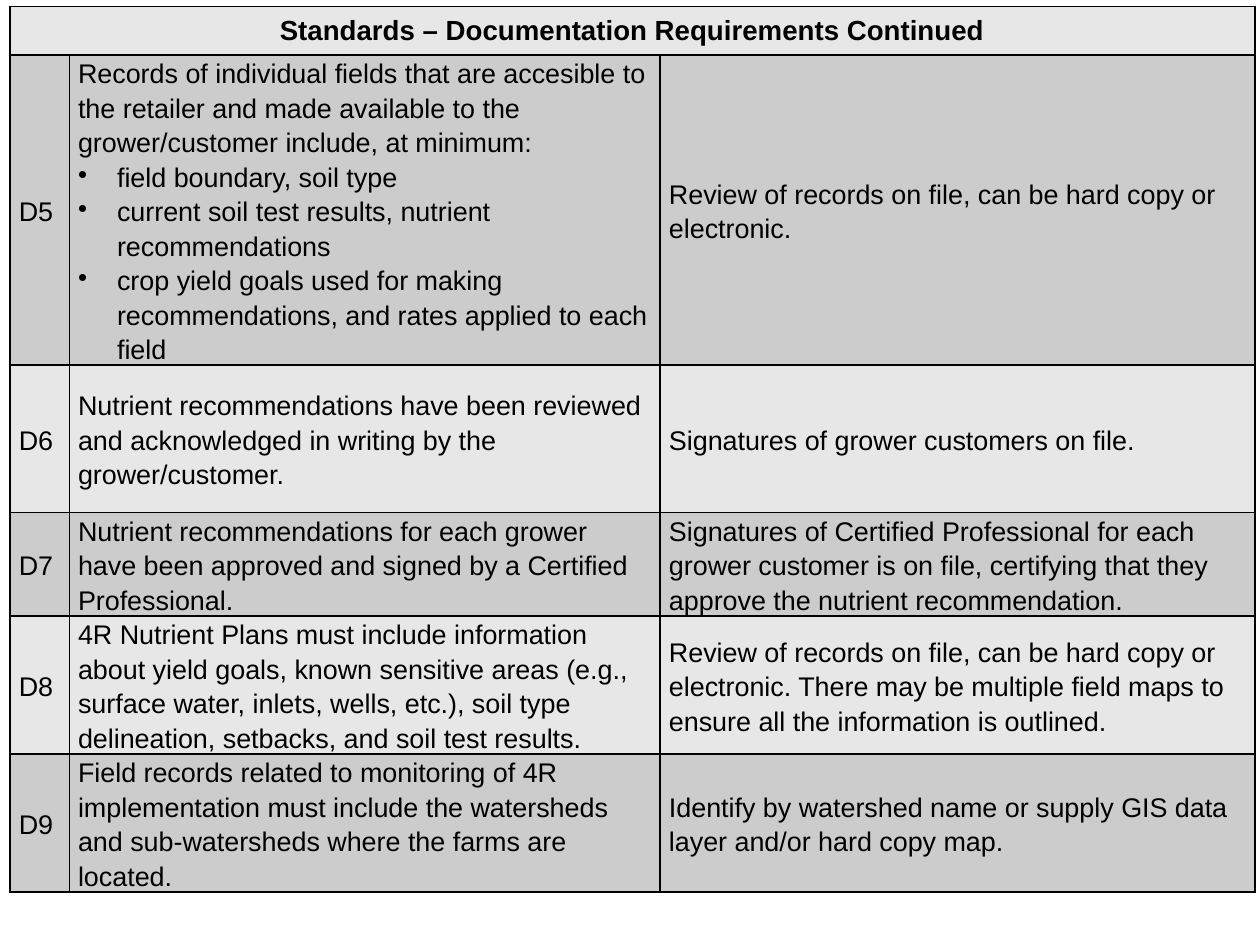
"""Build the slide of documentation standards D5 to D9."""
from pptx import Presentation
from pptx.dml.color import RGBColor
from pptx.enum.text import MSO_ANCHOR, PP_ALIGN
from pptx.oxml.ns import qn
from pptx.util import Inches, Pt
from lxml import etree

MIDDLE = MSO_ANCHOR.MIDDLE
CENTER = PP_ALIGN.CENTER
COLORS = {"text": "000000", "line": "000000", "light": "E7E7E7", "dark": "CCCCCC"}
WIDTHS = [0.47, 4.69, 4.72]
HEIGHTS = [0.31, 1.45, 1.17, 0.31, 0.91, 0.91]
TITLE = "Standards – Documentation Requirements Continued"
ROWS = [
    ("D5",
     "Records of individual fields that are accesible to the retailer and made "
     "available to the grower/customer include, at minimum:\n"
     "field boundary, soil type\n"
     "current soil test results, nutrient recommendations\n"
     "crop yield goals used for making recommendations, and rates applied to each field",
     "Review of records on file, can be hard copy or electronic."),
    ("D6",
     "Nutrient recommendations have been reviewed and acknowledged in writing by "
     "the grower/customer.",
     "Signatures of grower customers on file."),
    ("D7",
     "Nutrient recommendations for each grower have been approved and signed by a "
     "Certified Professional.",
     "Signatures of Certified Professional for each grower customer is on file, "
     "certifying that they approve the nutrient recommendation."),
    ("D8",
     "4R Nutrient Plans must include information about yield goals, known sensitive "
     "areas (e.g., surface water, inlets, wells, etc.), soil type delineation, "
     "setbacks, and soil test results.",
     "Review of records on file, can be hard copy or electronic. There may be "
     "multiple field maps to ensure all the information is outlined."),
    ("D9",
     "Field records related to monitoring of 4R implementation must include the "
     "watersheds and sub-watersheds where the farms are located.",
     "Identify by watershed name or supply GIS data layer and/or hard copy map."),
]


def style_cell(cell, fill, size, bold, pad_x, pad_y):
    cell.margin_left = cell.margin_right = Inches(pad_x)
    cell.margin_top = cell.margin_bottom = Inches(pad_y)
    for para in cell.text_frame.paragraphs:
        font = para.font
        font.name, font.size, font.bold = "Arial", Pt(size), bold
        font.color.rgb = RGBColor.from_string(COLORS["text"])
    props = cell._tc.get_or_add_tcPr()
    for side in ("lnL", "lnR", "lnT", "lnB"):
        line = etree.SubElement(props, qn("a:" + side), w=str(Pt(1)))
        paint = etree.SubElement(line, qn("a:solidFill"))
        etree.SubElement(paint, qn("a:srgbClr"), val=COLORS["line"])
    cell.fill.solid()
    cell.fill.fore_color.rgb = RGBColor.from_string(COLORS[fill])


def add_bullet(para):
    props = para._p.get_or_add_pPr()
    props.set("marL", str(Inches(0.31)))
    props.set("indent", str(Inches(-0.31)))
    mark = etree.Element(qn("a:buChar"), char="•")
    props.find(qn("a:defRPr")).addprevious(mark)


deck = Presentation()
deck.slide_width, deck.slide_height = Inches(10), Inches(7.5)
slide = deck.slides.add_slide(deck.slide_layouts[6])
frame = slide.shapes.add_table(len(HEIGHTS), len(WIDTHS), Inches(0.08), Inches(0.05),
                               Inches(9.88), Inches(7.49))
table = frame.table
for col, width in zip(table.columns, WIDTHS):
    col.width = Inches(width)
for row, height in zip(table.rows, HEIGHTS):
    row.height = Inches(height)
frame.height = Inches(7.49)

head = table.cell(0, 0)
head.merge(table.cell(0, 2))
head.text = TITLE
head.text_frame.paragraphs[0].alignment = CENTER
for cell in table.rows[0].cells:
    style_cell(cell, "light", 15.8, True, 0.15, 0.07)

for r, texts in enumerate(ROWS, 1):
    for c, text in enumerate(texts):
        cell = table.cell(r, c)
        cell.text = text
        cell.vertical_anchor = MIDDLE
        style_cell(cell, "dark" if r % 2 else "light", 15.4, False, 0.07, 0)
        for i, para in enumerate(cell.text_frame.paragraphs):
            para.line_spacing = 1.15
            if i:
                add_bullet(para)

deck.save("out.pptx")
